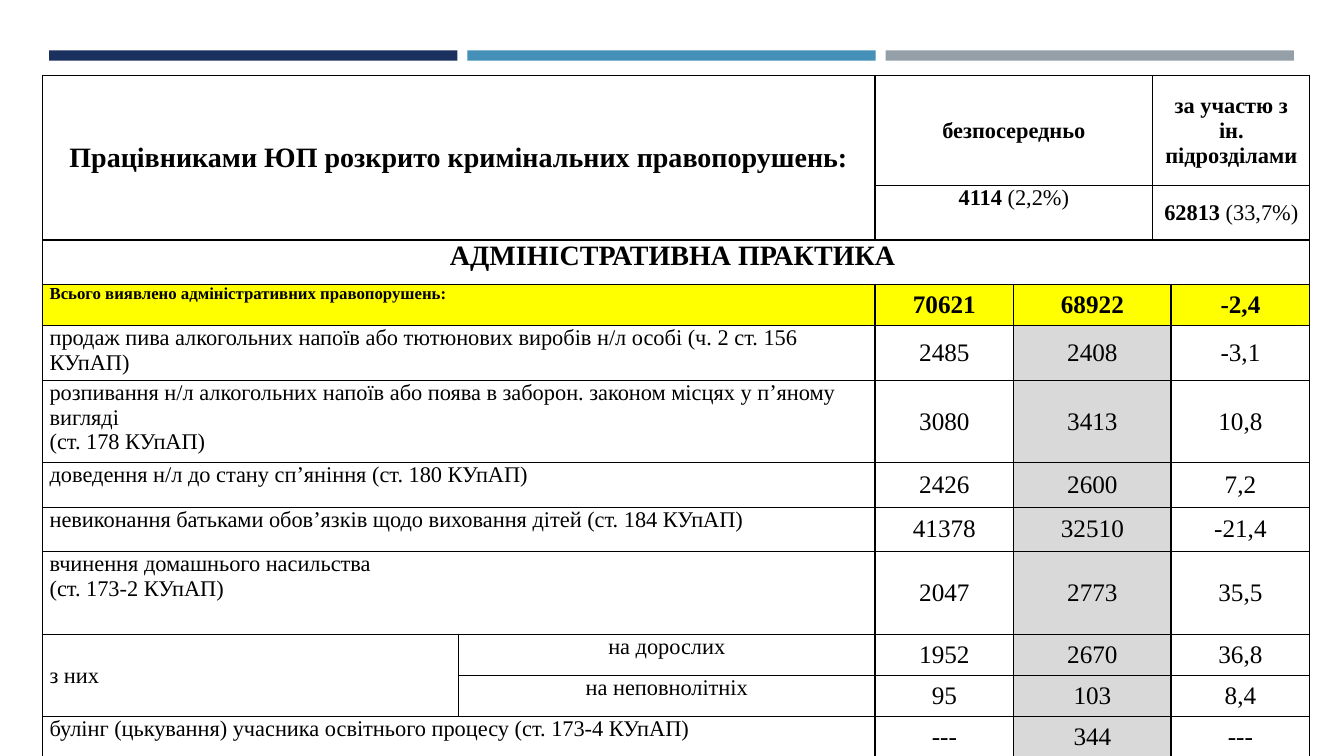
"""Build a slide with a table of juvenile police statistics."""
from dataclasses import dataclass

from lxml import etree
from pptx import Presentation
from pptx.dml.color import RGBColor
from pptx.enum import shapes, text
from pptx.oxml import ns
from pptx.util import Cm, Pt

FONT = "Times New Roman"
BLACK, WHITE, YELLOW, GREY = "000000", "FFFFFF", "FFFF00", "D9D9D9"
LEFT, CENTER, JUSTIFY = text.PP_ALIGN.LEFT, text.PP_ALIGN.CENTER, text.PP_ALIGN.JUSTIFY
TOP, MIDDLE = text.MSO_ANCHOR.TOP, text.MSO_ANCHOR.MIDDLE
COLUMN_WIDTHS = (10.49, 10.49, 3.5, 3.5, 0.46, 3.5)
ROW_HEIGHTS = (2.77, 1.37, 1.12, 1.04, 1.37, 2.08, 1.12, 1.12, 2.08, 1.04, 1.04, 1.04)
BAR_COLORS = ("1A315F", "4590B8", "959FA7")
BAR_LEFT, BAR_TOP, BAR_WIDTH, BAR_HEIGHT, BAR_STEP = 1.24, 1.27, 10.29, 0.26, 10.54


@dataclass(frozen=True)
class Run:
    text: str
    size: float = 16
    bold: bool = False


@dataclass(frozen=True)
class Entry:
    row: int
    column: int
    paragraphs: tuple[tuple[Run, ...], ...]
    row_span: int = 1
    column_span: int = 1
    alignment: text.PP_ALIGN = CENTER
    anchor: text.MSO_ANCHOR = MIDDLE
    fill: str = WHITE


@dataclass(frozen=True)
class Offence:
    lines: tuple[str, ...]
    figures: tuple[str, str, str]
    alignment: text.PP_ALIGN = LEFT
    label_column: int = 0
    label_span: int = 2
    label_size: float = 16
    total: bool = False


HEADINGS = (
    Entry(0, 0, ((Run("Працівниками ЮП розкрито кримінальних правопорушень:", 20, True),),), 2, 2),
    Entry(0, 2, ((Run("безпосередньо", bold=True),),), column_span=2),
    Entry(0, 4, ((Run("за участю з ін. підрозділами", bold=True),),), column_span=2),
    Entry(1, 2, ((Run("4114", bold=True), Run(" (2,2%)")),), column_span=2, anchor=TOP),
    Entry(1, 4, ((Run("62813", bold=True), Run(" (33,7%)")),), column_span=2),
    Entry(2, 0, ((Run("АДМІНІСТРАТИВНА ПРАКТИКА ", 20, True),),), column_span=6, anchor=TOP),
    Entry(9, 0, ((Run("з них"),),), row_span=2, alignment=LEFT),
)
FIRST_OFFENCE_ROW = 3
OFFENCES = (
    Offence(("Всього виявлено адміністративних правопорушень:",),
            ("70621", "68922", "-2,4"), label_size=12, total=True),
    Offence(("продаж пива алкогольних напоїв або тютюнових виробів н/л особі (ч. 2 ст. 156 КУпАП)",),
            ("2485", "2408", "-3,1")),
    Offence(("розпивання н/л алкогольних напоїв або поява в заборон. законом місцях у п’яному вигляді ",
             "(ст. 178 КУпАП)"), ("3080", "3413", "10,8")),
    Offence(("доведення н/л до стану сп’яніння (ст. 180 КУпАП)",), ("2426", "2600", "7,2")),
    Offence(("невиконання батьками обов’язків щодо виховання дітей (ст. 184 КУпАП)",),
            ("41378", "32510", "-21,4")),
    Offence(("вчинення домашнього насильства", "(ст. 173-2 КУпАП)"), ("2047", "2773", "35,5")),
    Offence(("на дорослих",), ("1952", "2670", "36,8"), CENTER, 1, 1),
    Offence(("на неповнолітніх",), ("95", "103", "8,4"), CENTER, 1, 1),
    Offence(("булінг (цькування) учасника освітнього процесу (ст. 173-4 КУпАП)",),
            ("---", "344", "---"), JUSTIFY),
)


def color(value: str) -> RGBColor:
    return RGBColor.from_string(value)


def draw_bar(slide, index: int, fill: str) -> None:
    shape = slide.shapes.add_shape(
        shapes.MSO_SHAPE.RECTANGLE, Cm(BAR_LEFT + index * BAR_STEP), Cm(BAR_TOP),
        Cm(BAR_WIDTH), Cm(BAR_HEIGHT))
    shape.shadow.inherit = False
    shape.fill.solid()
    shape.fill.fore_color.rgb = color(fill)
    shape.line.fill.background()


def style_cell(cell, fill: str) -> None:
    cell.fill.solid()
    cell.fill.fore_color.rgb = color(fill)
    properties = cell._tc.get_or_add_tcPr()
    for position, side in enumerate(("lnL", "lnR", "lnT", "lnB")):
        line = etree.Element(ns.qn(f"a:{side}"), w=str(Pt(1)))
        solid = etree.SubElement(line, ns.qn("a:solidFill"))
        etree.SubElement(solid, ns.qn("a:srgbClr"), val=BLACK)
        properties.insert(position, line)


def draw_entry(table, entry: Entry) -> None:
    cell = table.cell(entry.row, entry.column)
    last_row = entry.row + entry.row_span - 1
    last_column = entry.column + entry.column_span - 1
    if (last_row, last_column) != (entry.row, entry.column):
        cell.merge(table.cell(last_row, last_column))
    for row in range(entry.row, last_row + 1):
        for column in range(entry.column, last_column + 1):
            style_cell(table.cell(row, column), entry.fill)
    cell.vertical_anchor = entry.anchor
    cell.margin_left = cell.margin_right = Cm(0.18)
    cell.margin_top = cell.margin_bottom = Cm(0)
    frame = cell.text_frame
    for index, runs in enumerate(entry.paragraphs):
        paragraph = frame.add_paragraph() if index else frame.paragraphs[0]
        paragraph.alignment = entry.alignment
        for part in runs:
            run = paragraph.add_run()
            run.text = part.text
            run.font.name = FONT
            run.font.size = Pt(part.size)
            run.font.bold = part.bold
            run.font.color.rgb = color(BLACK)


def draw_offence(table, row: int, offence: Offence) -> None:
    label = tuple((Run(line, offence.label_size, offence.total),) for line in offence.lines)
    base = YELLOW if offence.total else WHITE
    middle = YELLOW if offence.total else GREY
    draw_entry(table, Entry(row, offence.label_column, label, column_span=offence.label_span,
                            alignment=offence.alignment, anchor=TOP, fill=base))
    places = ((2, 1, base), (3, 2, middle), (5, 1, base))
    for figure, (column, span, fill) in zip(offence.figures, places):
        draw_entry(table, Entry(row, column, ((Run(figure, 18, offence.total),),),
                                column_span=span, fill=fill))


def draw_table(slide) -> None:
    table = slide.shapes.add_table(
        len(ROW_HEIGHTS), len(COLUMN_WIDTHS), Cm(1.07), Cm(1.91),
        Cm(sum(COLUMN_WIDTHS)), Cm(sum(ROW_HEIGHTS))).table
    table.first_row = table.horz_banding = False
    for column, width in zip(table.columns, COLUMN_WIDTHS):
        column.width = Cm(width)
    for row, height in zip(table.rows, ROW_HEIGHTS):
        row.height = Cm(height)
    for entry in HEADINGS:
        draw_entry(table, entry)
    for row, offence in enumerate(OFFENCES, FIRST_OFFENCE_ROW):
        draw_offence(table, row, offence)


def main() -> None:
    presentation = Presentation()
    presentation.slide_width, presentation.slide_height = Cm(33.87), Cm(19.05)
    slide = presentation.slides.add_slide(presentation.slide_layouts[6])
    for index, fill in enumerate(BAR_COLORS):
        draw_bar(slide, index, fill)
    draw_table(slide)
    presentation.save("out.pptx")


if __name__ == "__main__":
    main()
